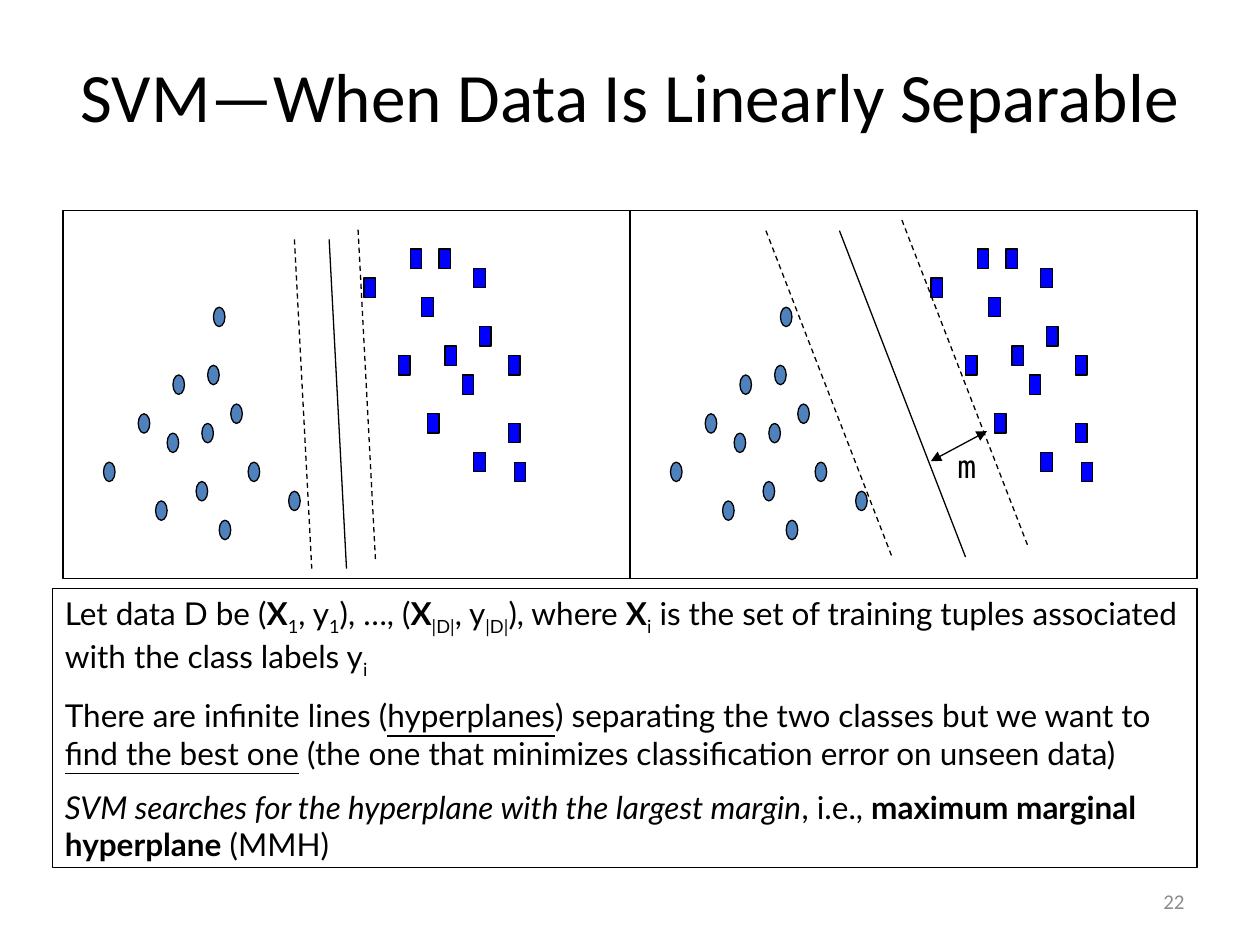
from lxml import etree
from pptx import Presentation
from pptx import util as u
from pptx.dml.color import RGBColor
from pptx.enum import dml, shapes, text
from pptx.oxml import ns

TITLE = "SVM—When Data Is Linearly Separable"
PAGE_NUMBER = "22"
MARGIN_LABEL = "m"
BLACK, GREY, STEEL, BLUE = "000000", "8C8C8C", "4F81BD", "0000FF"

PANEL_TOP, PANEL_WIDTH, PANEL_HEIGHT = 4.24, 11.43, 7.42
COLUMN, ROW = PANEL_WIDTH / 98, PANEL_HEIGHT / 38
MARKER_SPAN = 2

CIRCLES = [(16, 30), (18, 23), (7, 26), (13, 21), (23, 28), (19, 17), (24, 22),
           (25, 16), (29, 20), (32, 26), (27, 32), (39, 29), (26, 10)]
SQUARES = [(58, 15), (52, 7), (60, 4), (63, 21), (62, 9), (66, 14), (65, 4),
           (71, 6), (69, 17), (72, 12), (71, 25), (77, 15), (77, 22), (78, 26)]
CLASSES = [(shapes.MSO_SHAPE.OVAL, STEEL, CIRCLES),
           (shapes.MSO_SHAPE.RECTANGLE, BLUE, SQUARES)]

PANELS = [
    {"left": 1.27, "run": (3, 34),
     "starts": [(51, 2, True), (40, 3, True), (46, 3, False)]},
    {"left": 12.7, "run": (21.8, 33.7),
     "starts": [(23.5, 2.1, True), (47, 1, True), (36.2, 2.1, False)]},
]
MARGIN_ARROW = ((52, 25.9), (61.7, 22.8))

PARAGRAPHS = [
    [("Let data D be (", ""), ("X", "bold"), ("1", "sub"), (", y", ""), ("1", "sub"),
     ("), …, (", ""), ("X", "bold"), ("|D|", "sub"), (", y", ""), ("|D|", "sub"),
     ("), where ", ""), ("X", "bold"), ("i", "sub"),
     (" is the set of training tuples associated with the class labels y", ""),
     ("i", "sub")],
    [("There are infinite lines (", ""), ("hyperplanes", "underline"),
     (") separating the two classes but we want to ", ""),
     ("find the best one", "underline"),
     (" (the one that minimizes classification error on unseen data)", "")],
    [("SVM searches for the hyperplane with the largest margin", "italic"),
     (", i.e., ", ""), ("maximum marginal hyperplane", "bold"), (" (MMH)", "")],
]


def color(value):
    return RGBColor.from_string(value)


def box(left, top, width, height):
    return [u.Cm(length) for length in (left, top, width, height)]


def add_run(paragraph, content, font, size, value=BLACK, style=""):
    run = paragraph.add_run()
    run.text = content
    run.font.name, run.font.size = font, u.Pt(size)
    run.font.color.rgb = color(value)
    if style == "sub":
        run.font._element.set("baseline", "-25000")
    elif style:
        setattr(run.font, style, True)


def add_outlined(parent, kind, bounds, fill=None):
    shape = parent.add_shape(kind, *box(*bounds))
    shape.shadow.inherit = False
    if fill:
        shape.fill.solid()
        shape.fill.fore_color.rgb = color(fill)
    else:
        shape.fill.background()
    shape.line.color.rgb = color(BLACK)
    shape.line.width = u.Pt(0.75)
    return shape


def grid_point(panel, column, row):
    return panel["left"] + column * COLUMN, PANEL_TOP + row * ROW


def add_line(parent, panel, start, end, dashed=False, arrows=False):
    ends = [u.Cm(length) for point in (start, end) for length in grid_point(panel, *point)]
    line = parent.add_connector(shapes.MSO_CONNECTOR.STRAIGHT, *ends)
    line.line.color.rgb = color(BLACK)
    line.line.width = u.Pt(0.75)
    if dashed:
        line.line.dash_style = dml.MSO_LINE.DASH
    properties = line._element.spPr
    if arrows:
        outline = properties.find(ns.qn("a:ln"))
        for tag in ("a:headEnd", "a:tailEnd"):
            etree.SubElement(outline, ns.qn(tag), type="triangle")
    etree.SubElement(properties, ns.qn("a:effectLst"))


def add_panel(slide, panel):
    group = slide.shapes.add_group_shape().shapes
    for kind, fill, cells in CLASSES:
        for cell in cells:
            size = (MARKER_SPAN * COLUMN, MARKER_SPAN * ROW)
            add_outlined(group, kind, grid_point(panel, *cell) + size, fill)
    add_outlined(group, shapes.MSO_SHAPE.RECTANGLE,
                 (panel["left"], PANEL_TOP, PANEL_WIDTH, PANEL_HEIGHT))
    across, down = panel["run"]
    for column, row, dashed in panel["starts"]:
        add_line(group, panel, (column, row), (column + across, row + down), dashed)


def add_label(slide, content, bounds, font, size, value, align, anchor):
    frame = slide.shapes.add_textbox(*box(*bounds)).text_frame
    frame.word_wrap = True
    frame.vertical_anchor = anchor
    frame.paragraphs[0].alignment = align
    add_run(frame.paragraphs[0], content, font, size, value)


def add_explanation(slide):
    shape = add_outlined(slide.shapes, shapes.MSO_SHAPE.RECTANGLE, (1.06, 11.86, 23.07, 5.63))
    frame = shape.text_frame
    frame.word_wrap = True
    frame.vertical_anchor = text.MSO_ANCHOR.TOP
    for index, runs in enumerate(PARAGRAPHS):
        paragraph = frame.add_paragraph() if index else frame.paragraphs[0]
        paragraph.alignment = text.PP_ALIGN.LEFT
        paragraph.space_before = u.Pt(9 if index else 0)
        for content, style in runs:
            add_run(paragraph, content, "Lato", 18, style=style)


def main():
    presentation = Presentation()
    presentation.slide_width, presentation.slide_height = u.Cm(25.4), u.Cm(19.05)
    slide = presentation.slides.add_slide(presentation.slide_layouts[5])

    title = slide.shapes.title
    title.left, title.top, title.width, title.height = box(0, 1.06, 25.4, 1.7)
    title.text_frame.vertical_anchor = text.MSO_ANCHOR.MIDDLE
    title.text_frame.paragraphs[0].alignment = text.PP_ALIGN.CENTER
    add_run(title.text_frame.paragraphs[0], TITLE, "Calibri", 39.6)

    add_label(slide, PAGE_NUMBER, (18.2, 17.66, 5.93, 1.01), "Calibri", 12, GREY,
              text.PP_ALIGN.RIGHT, text.MSO_ANCHOR.MIDDLE)
    for panel in PANELS:
        add_panel(slide, panel)
    add_line(slide.shapes, PANELS[1], *MARGIN_ARROW, arrows=True)
    add_label(slide, MARGIN_LABEL, (19.05, 8.89, 1.47, 1.02), "DejaVu Sans Mono", 18, BLACK,
              text.PP_ALIGN.LEFT, text.MSO_ANCHOR.TOP)
    add_explanation(slide)
    presentation.save("out.pptx")


if __name__ == "__main__":
    main()
